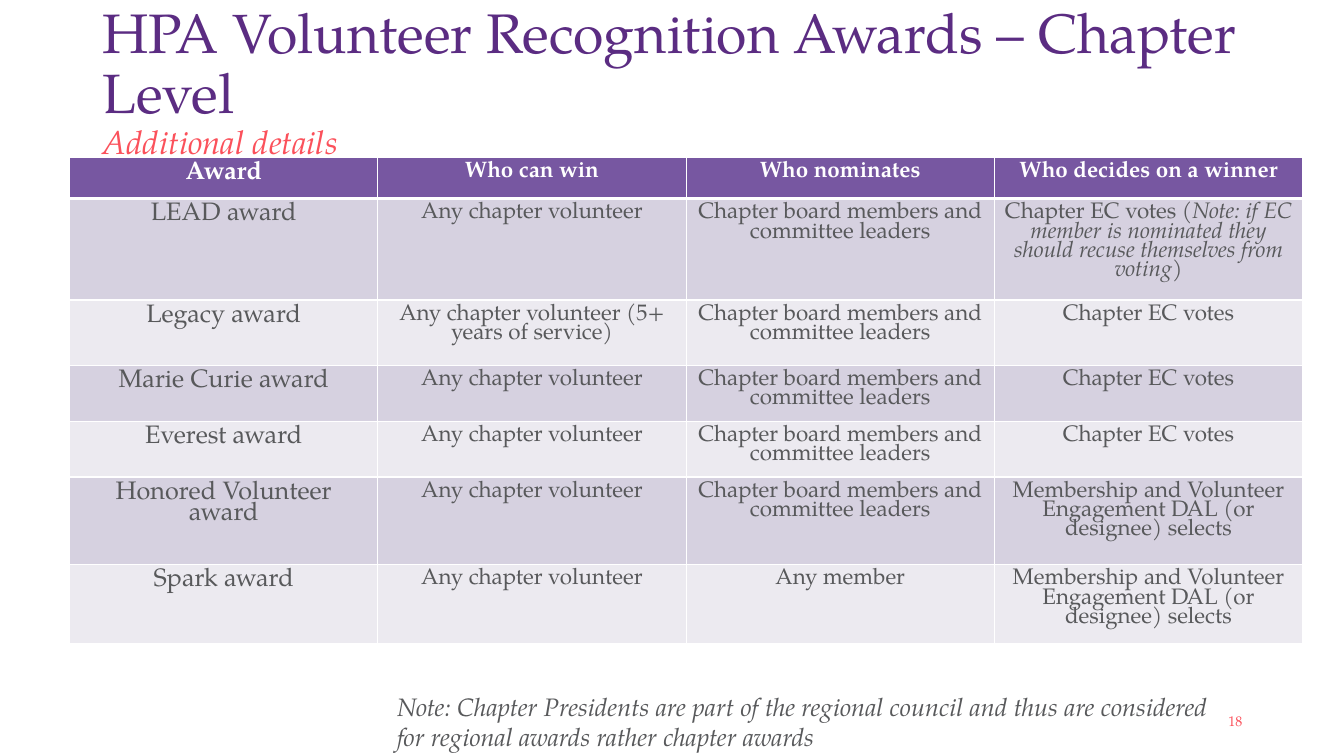
from lxml.etree import SubElement
from pptx import Presentation
from pptx.dml.color import RGBColor
from pptx.enum.text import MSO_ANCHOR as Anchor, PP_ALIGN as Align
from pptx.oxml.ns import qn
from pptx.util import Inches, Pt

FONT = "TeX Gyre Pagella"
PURPLE = RGBColor(0x5B, 0x2C, 0x82)
CORAL = RGBColor(0xFB, 0x51, 0x5B)
GRAY = RGBColor(0x58, 0x59, 0x5B)
WHITE = RGBColor(0xFF, 0xFF, 0xFF)
HEADER_FILL = RGBColor(0x77, 0x57, 0xA1)
BAND_FILLS = [RGBColor(0xD6, 0xD1, 0xE0), RGBColor(0xEC, 0xEA, 0xF0)]

VOLUNTEER = "Any chapter volunteer"
LEADERS = "Chapter board members and committee leaders"
VOTES = "Chapter EC votes"
DAL_SELECTS = "Membership and Volunteer Engagement DAL (or designee) selects"
RECUSAL = "Note: if EC member is nominated they should recuse themselves from voting"

HEADINGS = ["Award", "Who can win", "Who nominates", "Who decides on a winner"]
AWARDS = [
    ["LEAD award", VOLUNTEER, LEADERS, VOTES],
    ["Legacy award", VOLUNTEER + " (5+ years of service)", LEADERS, VOTES],
    ["Marie Curie award", VOLUNTEER, LEADERS, VOTES],
    ["Everest award", VOLUNTEER, LEADERS, VOTES],
    ["Honored Volunteer award", VOLUNTEER, LEADERS, DAL_SELECTS],
    ["Spark award", VOLUNTEER, "Any member", DAL_SELECTS],
]
ROW_HEIGHTS = [0.41, 0.67, 0.65, 0.5, 0.5, 0.87, 0.68]


def add_run(paragraph, text, size, color, bold=False, italic=False):
    """Append one styled run to the paragraph."""
    run = paragraph.add_run()
    run.text = text
    font = run.font
    font.name, font.size, font.bold, font.italic = FONT, Pt(size), bold, italic
    font.color.rgb = color


def add_text_box(slide, box, anchor=Anchor.TOP):
    """Add a wrapping text box and return its first paragraph."""
    frame = slide.shapes.add_textbox(*map(Inches, box)).text_frame
    frame.word_wrap = True
    frame.vertical_anchor = anchor
    return frame.paragraphs[0]


def add_title(slide, box):
    """Place the title with its subtitle on a new line."""
    paragraph = add_text_box(slide, box, Anchor.MIDDLE)
    paragraph.line_spacing = 0.9
    add_run(paragraph, "HPA Volunteer Recognition Awards – Chapter Level", 39.6, PURPLE)
    paragraph.add_line_break()
    add_run(paragraph, "Additional details", 23.4, CORAL, italic=True)


def set_borders(cell, top, bottom):
    """Draw white cell borders, with the top and bottom widths in points."""
    properties = cell._tc.get_or_add_tcPr()
    for side, width in (("L", 1), ("R", 1), ("T", top), ("B", bottom)):
        line = SubElement(properties, qn(f"a:ln{side}"), w=str(Pt(width)))
        fill = SubElement(line, qn("a:solidFill"))
        SubElement(fill, qn("a:srgbClr"), val=str(WHITE))


def fill_cell(cell, text, row, column):
    """Style one table cell by its row and column and write its text."""
    is_header = row == 0
    set_borders(cell, 3 if row == 1 else 1, 3 if is_header else 1)
    cell.fill.solid()
    cell.fill.fore_color.rgb = HEADER_FILL if is_header else BAND_FILLS[(row - 1) % 2]
    paragraph = cell.text_frame.paragraphs[0]
    paragraph.alignment = Align.CENTER
    paragraph.line_spacing = 0.85
    size = 18 if column == 0 else 16
    color = WHITE if is_header else GRAY
    add_run(paragraph, text, size, color, bold=is_header)
    if row == 1 and column == 3:
        add_run(paragraph, " (", size, color)
        add_run(paragraph, RECUSAL, size, color, italic=True)
        add_run(paragraph, ")", size, color)


def add_awards_table(slide, left, top, width):
    """Place the table of awards in equal columns."""
    rows = [HEADINGS] + AWARDS
    table = slide.shapes.add_table(
        len(rows), len(HEADINGS), Inches(left), Inches(top),
        Inches(width), Inches(sum(ROW_HEIGHTS))).table
    for column in table.columns:
        column.width = Inches(width / len(HEADINGS))
    for row, texts in enumerate(rows):
        table.rows[row].height = Inches(ROW_HEIGHTS[row])
        for column, text in enumerate(texts):
            fill_cell(table.cell(row, column), text, row, column)


def add_note(slide, box):
    """Place the note below the table."""
    paragraph = add_text_box(slide, box)
    add_run(paragraph, "Note: Chapter Presidents are part of the regional council and thus "
            "are considered for regional awards rather chapter awards", 18, GRAY, italic=True)


def add_page_number(slide, box):
    """Place the page number at the right of its box."""
    paragraph = add_text_box(slide, box, Anchor.MIDDLE)
    paragraph.alignment = Align.RIGHT
    add_run(paragraph, "18", 10, CORAL)


def main():
    """Build the awards slide and save it."""
    presentation = Presentation()
    presentation.slide_width, presentation.slide_height = Inches(13.33), Inches(7.5)
    slide = presentation.slides.add_slide(presentation.slide_layouts[6])
    add_page_number(slide, (9.42, 6.95, 3, 0.4))
    add_title(slide, (0.92, 0.4, 11.5, 0.86))
    add_awards_table(slide, 0.69, 1.56, 12.23)
    add_note(slide, (3.84, 6.81, 8.5, 0.71))
    presentation.save("out.pptx")


if __name__ == "__main__":
    main()
